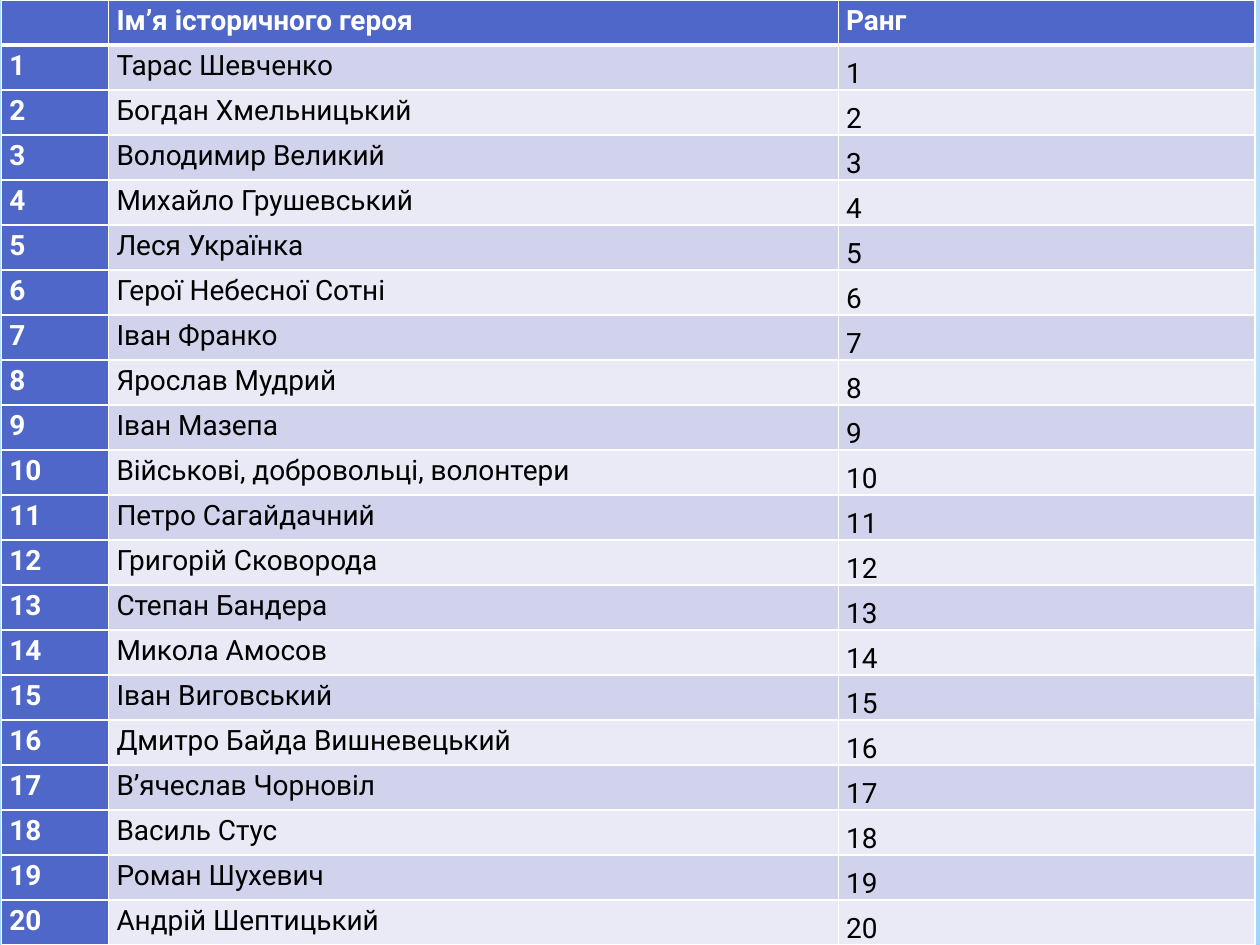
from lxml import etree
from pptx import Presentation
from pptx.dml.color import RGBColor
from pptx.enum.shapes import MSO_SHAPE
from pptx.enum.text import MSO_ANCHOR, PP_ALIGN
from pptx.oxml.ns import qn
from pptx.util import Pt

RECT, OVAL = MSO_SHAPE.RECTANGLE, MSO_SHAPE.OVAL
JUSTIFY = PP_ALIGN.JUSTIFY
TOP, BOTTOM = MSO_ANCHOR.TOP, MSO_ANCHOR.BOTTOM

THEME = {
    "font": "Roboto",
    "size": 16,
    "sky": "9ED5FF",
    "deep_sky": "5BB9FF",
    "haze": "B4DCFA",
    "accent": "4E67C8",
    "bands": ("E9EAF5", "D0D3EB"),
    "light": "FFFFFF",
    "dark": "000000",
}

HEADER = ("", "Ім’я історичного героя", "Ранг")
HEROES = (
    "Тарас Шевченко",
    "Богдан Хмельницький",
    "Володимир Великий",
    "Михайло Грушевський",
    "Леся Українка",
    "Герої Небесної Сотні",
    "Іван Франко",
    "Ярослав Мудрий",
    "Іван Мазепа",
    "Військові, добровольці, волонтери",
    "Петро Сагайдачний",
    "Григорій Сковорода",
    "Степан Бандера",
    "Микола Амосов",
    "Іван Виговський",
    "Дмитро Байда Вишневецький",
    "В’ячеслав Чорновіл",
    "Василь Стус",
    "Роман Шухевич",
    "Андрій Шептицький",
)
COLUMN_WIDTHS = (61.2, 416.9, 238.3)
CENTER = (50, 50, 50, 50)
BACKDROP = (
    (RECT, 401.8, 138.2, CENTER, ((0, "light", 91), (37, "light", 76), (100, "haze", 79))),
    (RECT, 0, 401.8, CENTER, ((0, "light", 89), (48, "light", 62), (100, "haze", 79))),
    (RECT, 296.6, 180, None, ((0, "light", 0), (29, "light", 30), (45, "haze", 40),
                              (55, "light", 26), (65, "haze", 60), (100, "light", 0))),
    (OVAL, 126, 401.8, CENTER, ((0, "light", 100), (56, "light", 0))),
)


def set_gradient(fill, element, stops, focus):
    fill.gradient()
    grad = element.find(f".//{qn('a:gradFill')}")
    for child in list(grad):
        grad.remove(child)
    stop_list = etree.SubElement(grad, qn("a:gsLst"))
    for position, color, opacity in stops:
        gs = etree.SubElement(stop_list, qn("a:gs"), pos=str(position * 1000))
        clr = etree.SubElement(gs, qn("a:srgbClr"), val=THEME[color])
        etree.SubElement(clr, qn("a:alpha"), val=str(opacity * 1000))
    if focus:
        circle = etree.SubElement(grad, qn("a:path"), attrib={"path": "circle"})
        sides = {side: str(value * 1000) for side, value in zip("ltrb", focus)}
        etree.SubElement(circle, qn("a:fillToRect"), attrib=sides)
    else:
        etree.SubElement(grad, qn("a:lin"), ang="5400000", scaled="0")


def add_border(cell, side, width):
    ln = etree.SubElement(cell._tc.get_or_add_tcPr(), qn(f"a:ln{side}"), w=str(Pt(width)))
    fill = etree.SubElement(ln, qn("a:solidFill"))
    etree.SubElement(fill, qn("a:srgbClr"), val=THEME["light"])


prs = Presentation()
prs.slide_width, prs.slide_height = Pt(720), Pt(540)
s = prs.slides.add_slide(prs.slide_layouts[6])
sky_stops = ((0, "sky", 100), (60, "light", 100), (100, "deep_sky", 100))
set_gradient(s.background.fill, s._element, sky_stops, (20, 10, 20, 60))

for kind, top, height, focus, stops in BACKDROP:
    sp = s.shapes.add_shape(kind, Pt(0), Pt(top), Pt(720), Pt(height))
    sp.shadow.inherit = False
    sp.line.fill.background()
    set_gradient(sp.fill, sp._element, stops, focus)

rows = [HEADER] + [(str(i), hero, str(i)) for i, hero in enumerate(HEROES, 1)]
table = s.shapes.add_table(
    len(rows), len(HEADER), Pt(0.9), Pt(0), Pt(sum(COLUMN_WIDTHS)), Pt(540)
).table
table.first_col = True
for column, width in zip(table.columns, COLUMN_WIDTHS):
    column.width = Pt(width)

for i, texts in enumerate(rows):
    table.rows[i].height = Pt(540 / len(rows))
    for j, text in enumerate(texts):
        cell = table.cell(i, j)
        heading = i == 0 or j == 0
        cell.margin_left = cell.margin_right = Pt(4.5)
        cell.margin_top = cell.margin_bottom = Pt(0)
        cell.vertical_anchor = BOTTOM if i > 0 and j == 2 else TOP
        for side, width in (("L", 1), ("R", 1), ("T", 3 if i == 1 else 1), ("B", 3 if i == 0 else 1)):
            add_border(cell, side, width)
        cell.fill.solid()
        fill_color = THEME["accent"] if heading else THEME["bands"][i % 2]
        cell.fill.fore_color.rgb = RGBColor.from_string(fill_color)
        cell.text = text
        p = cell.text_frame.paragraphs[0]
        p.alignment = JUSTIFY
        p.line_spacing = 1.15
        p.font.name = THEME["font"]
        p.font.size = Pt(THEME["size"])
        p.font.bold = heading
        p.font.color.rgb = RGBColor.from_string(THEME["light" if heading else "dark"])

prs.save("out.pptx")
